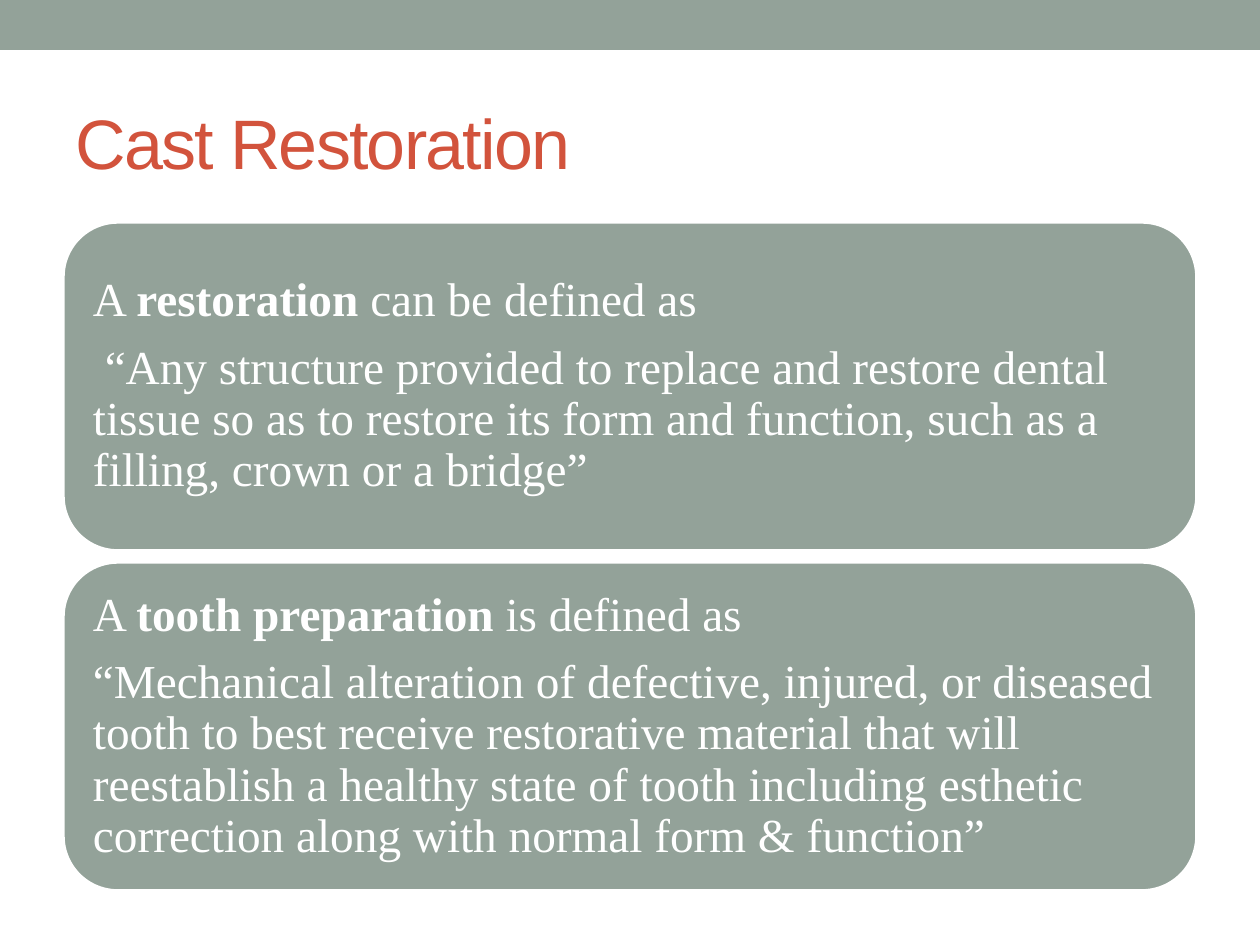
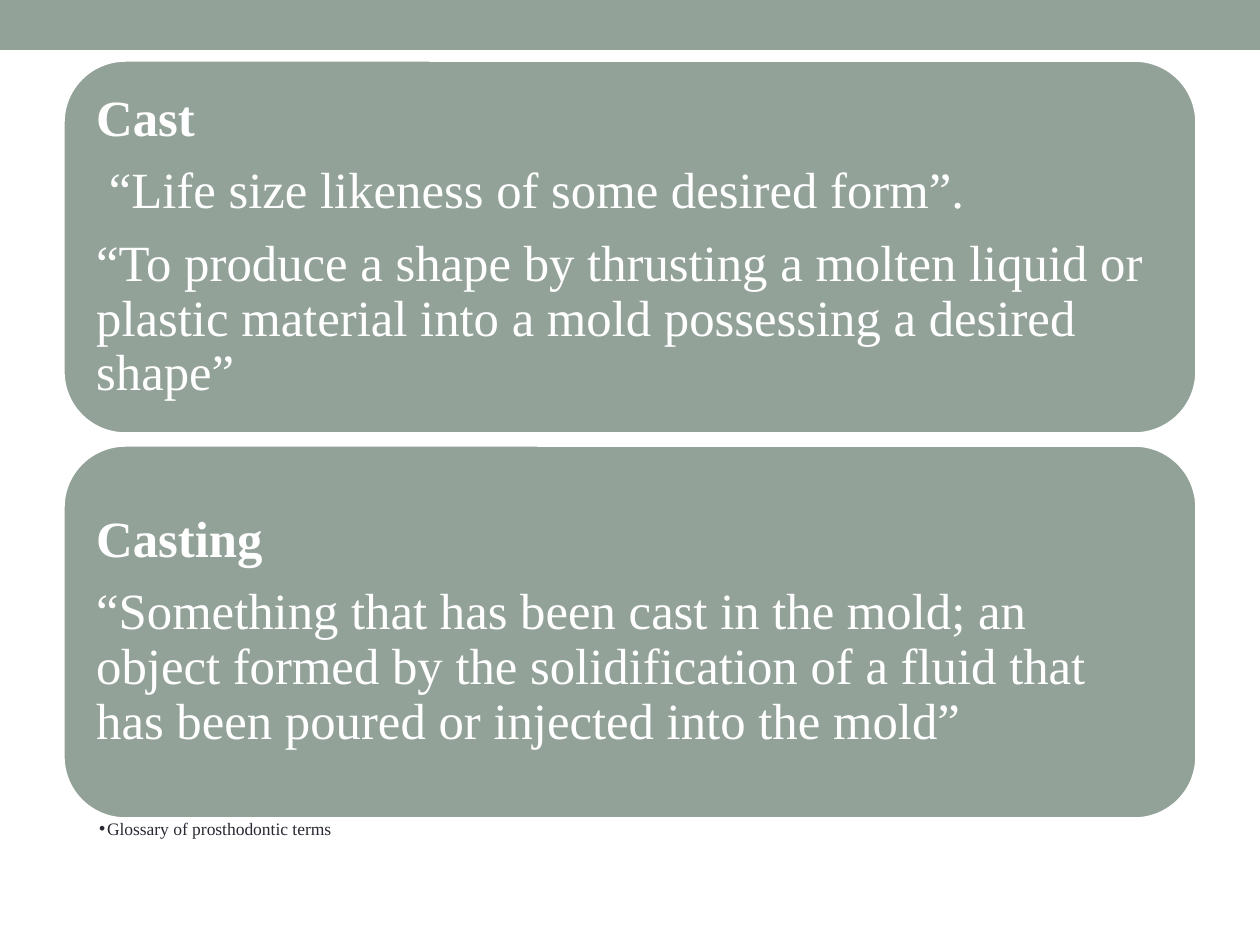
from lxml import etree
from pptx import Presentation
from pptx.dml.color import RGBColor
from pptx.enum.shapes import MSO_SHAPE
from pptx.enum.text import MSO_ANCHOR, MSO_AUTO_SIZE, PP_ALIGN
from pptx.oxml.ns import qn
from pptx.util import Pt

RECT = MSO_SHAPE.RECTANGLE
ROUND = MSO_SHAPE.ROUNDED_RECTANGLE
MIDDLE, TOP = MSO_ANCHOR.MIDDLE, MSO_ANCHOR.TOP
LEFT = PP_ALIGN.LEFT
FIXED = MSO_AUTO_SIZE.NONE

SAGE = RGBColor(0x93, 0xA2, 0x99)
RUST = RGBColor(0xD2, 0x53, 0x3C)
INK = RGBColor(0x29, 0x29, 0x34)
WHITE = RGBColor(0xFF, 0xFF, 0xFF)
SANS, SERIF = "Arial", "Times New Roman"

SCALE = 914400 / 126
WIDE, HIGH = 1260, 945
EDGE, SPAN, GAP = 63, 1134, 11

TERMS = [
    [
        [("A ", False), ("restoration ", True), ("can be defined as", False)],
        [(" “Any structure provided to replace and restore dental tissue so as "
          "to restore its form and function, such as a filling, crown or a bridge”", False)],
    ],
    [
        [("A ", False), ("tooth preparation ", True), ("is defined as", False)],
        [("“Mechanical alteration of defective, injured, or diseased tooth to best "
          "receive restorative material that will reestablish a healthy state of tooth "
          "including esthetic correction along with normal form & function”", False)],
    ],
]
CASTS = [
    [
        [("Cast", True)],
        [(" “Life size likeness of some desired form”.", False)],
        [("“To produce a shape by thrusting a molten liquid or plastic material "
          "into a mold possessing a desired shape”", False)],
    ],
    [
        [("Casting", True)],
        [("“Something that has been cast in the mold; an object formed by the "
          "solidification of a fluid that has been poured or injected into the mold”", False)],
    ],
]


def px(num):
    return round(num * SCALE)


def place(shape, box):
    shape.left, shape.top, shape.width, shape.height = map(px, box)


def inset(frame, left, top, right, bottom):
    frame.margin_left, frame.margin_top = px(left), px(top)
    frame.margin_right, frame.margin_bottom = px(right), px(bottom)


def style(run, name, size, color, bold=False):
    font = run.font
    font.name, font.size, font.bold = name, Pt(size), bold
    font.color.rgb = color


def block(slide, kind, box):
    shape = slide.shapes.add_shape(kind, *map(px, box))
    shape.shadow.inherit = False
    shape.fill.solid()
    shape.fill.fore_color.rgb = SAGE
    return shape


def band(slide):
    block(slide, RECT, (0, 0, WIDE, 50)).line.fill.background()


def title(slide, text, box):
    shape = slide.shapes.title
    place(shape, box)
    frame = shape.text_frame
    frame.text = text
    frame.vertical_anchor = MIDDLE
    line = frame.paragraphs[0]
    line.alignment = LEFT
    run = line.runs[0]
    style(run, SANS, 40, RUST)
    run._r.get_or_add_rPr().set("spc", "-100")


def panel(slide, box, lines, size, pad):
    shape = block(slide, ROUND, box)
    shape.line.color.rgb = WHITE
    shape.line.width = Pt(2)
    frame = shape.text_frame
    frame.word_wrap = True
    frame.vertical_anchor = MIDDLE
    inset(frame, pad, pad, pad, pad)
    for index, parts in enumerate(lines):
        line = frame.add_paragraph() if index else frame.paragraphs[0]
        line.alignment = LEFT
        line.line_spacing = 0.9
        line.space_after = Pt(0.35 * size)
        for text, bold in parts:
            run = line.add_run()
            run.text = text
            style(run, SERIF, size, WHITE, bold)


def stack(slide, top, high, terms, size, pad):
    for index, lines in enumerate(terms):
        box = (EDGE, top + index * (high + GAP), SPAN, high)
        panel(slide, box, lines, size, pad)


def source(slide, text, box):
    shape = slide.placeholders[1]
    place(shape, box)
    frame = shape.text_frame
    frame.text = text
    frame.auto_size = FIXED
    frame.vertical_anchor = TOP
    inset(frame, 36, 1, 10, 1)
    line = frame.paragraphs[0]
    line.line_spacing = 0.9
    line.space_before = Pt(0)
    line.space_after = Pt(2)
    style(line.runs[0], SERIF, 10, INK)
    props = line._p.get_or_add_pPr()
    props.set("marL", str(px(8)))
    props.set("indent", str(px(-8)))
    etree.SubElement(props, qn("a:buChar")).set("char", "•")


def define(deck):
    slide = deck.slides.add_slide(deck.slide_layouts[5])
    band(slide)
    title(slide, "Cast Restoration", (EDGE, 73, SPAN, 136))
    stack(slide, 222, 329, TERMS, 27, 14)


def gloss(deck):
    slide = deck.slides.add_slide(deck.slide_layouts[1])
    head = slide.shapes.title.element
    head.getparent().remove(head)
    band(slide)
    stack(slide, 60, 374, CASTS, 29, 15)
    source(slide, "Glossary of prosthodontic terms", (EDGE, 819, SPAN, 67))


def main():
    deck = Presentation()
    deck.slide_width, deck.slide_height = px(WIDE), px(HIGH)
    define(deck)
    gloss(deck)
    deck.save("out.pptx")


if __name__ == "__main__":
    main()
